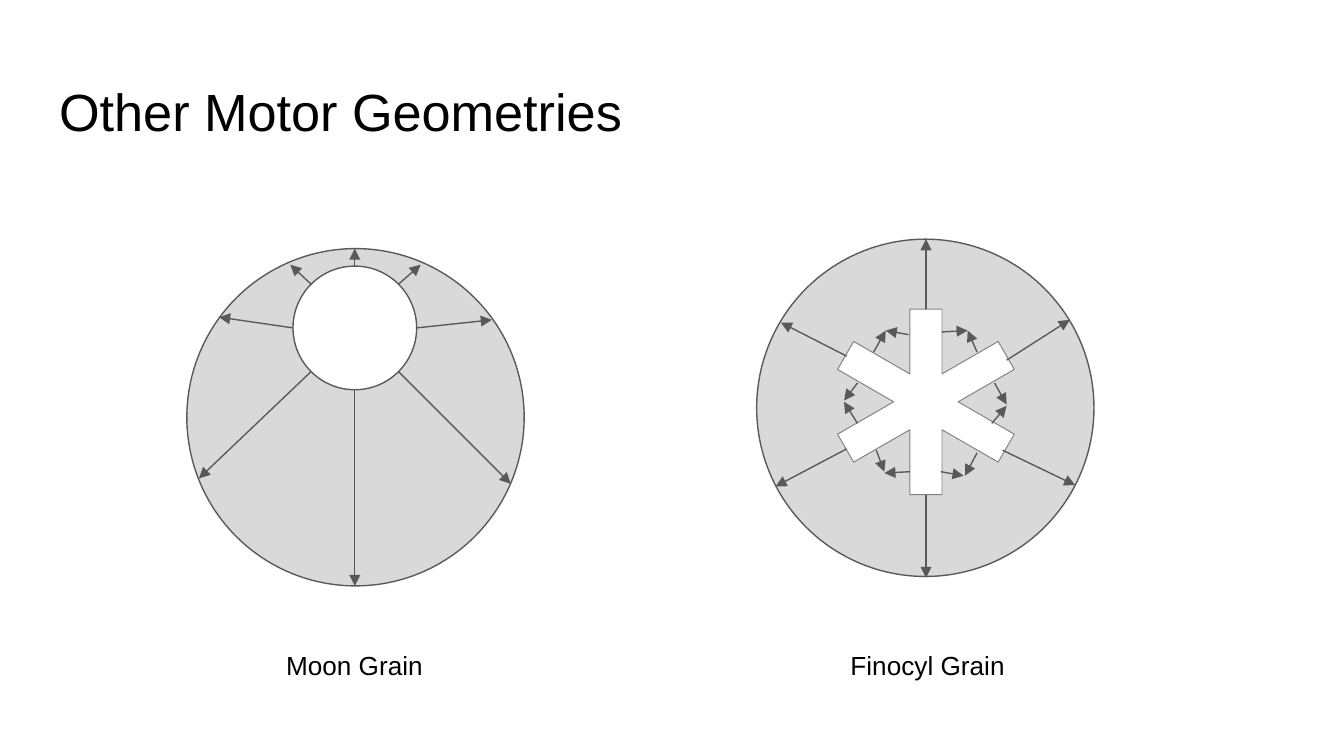
from math import cos, pi, sin
from lxml import etree
from pptx import Presentation
from pptx.dml.color import RGBColor
from pptx.enum.shapes import MSO_CONNECTOR, MSO_SHAPE
from pptx.enum.text import MSO_ANCHOR, PP_ALIGN
from pptx.oxml.ns import qn
from pptx.util import Inches, Pt

OVAL = MSO_SHAPE.OVAL
LINE = MSO_CONNECTOR.STRAIGHT
TOP = MSO_ANCHOR.TOP
LEFT = PP_ALIGN.LEFT

FONT = "Arial"
BLACK, WHITE, GRAIN, EDGE, RIM = "000000", "FFFFFF", "D9D9D9", "595959", "808080"

TITLE = "Other Motor Geometries"
LABELS = [("Moon Grain", 2.03, 1.22), ("Finocyl Grain", 6.23, 1.36)]
SIZE = 2.51
MOON, FIN = (1.39, 1.85), (5.63, 1.78)
BORE, BORE_R = (2.64, 2.44), 0.46
STAR, STAR_R, HALF = (6.89, 2.99), 0.69, 0.12

MOON_TIPS = [(2.64, 1.85), (3.13, 1.97), (3.66, 2.38), (3.8, 3.6),
             (2.64, 4.36), (1.48, 3.56), (1.63, 2.36), (2.16, 1.97)]
FIN_RAYS = [
    ((6.89, 2.3), (6.89, 1.78)), ((7.49, 2.68), (7.96, 2.38)),
    ((7.46, 3.35), (8, 3.61)), ((6.89, 3.68), (6.89, 4.3)),
    ((6.3, 3.34), (5.77, 3.62)), ((6.3, 2.65), (5.81, 2.4)),
]
GAP_RAYS = [
    ((6.5, 2.62), (6.59, 2.46)), ((6.76, 2.49), (6.59, 2.46)),
    ((7.01, 2.47), (7.2, 2.46)), ((7.27, 2.62), (7.2, 2.46)),
    ((7.4, 2.85), (7.49, 3.01)), ((7.38, 3.15), (7.49, 3.02)),
    ((7.27, 3.37), (7.18, 3.54)), ((7, 3.51), (7.17, 3.54)),
    ((6.77, 3.51), (6.58, 3.52)), ((6.52, 3.35), (6.58, 3.51)),
    ((6.38, 3.15), (6.28, 2.99)), ((6.38, 2.85), (6.28, 2.98)),
]


def rgb(code):
    """Turn a hex string into a colour."""
    return RGBColor.from_string(code)


def paint(shape, fill, edge, width):
    """Set the fill and outline of a shape."""
    shape.shadow.inherit = False
    shape.fill.solid()
    shape.fill.fore_color.rgb = rgb(fill)
    shape.line.color.rgb = rgb(edge)
    shape.line.width = Pt(width)


def disc(slide, x, y, size, fill):
    """Draw an outlined circle."""
    shape = slide.shapes.add_shape(OVAL, Inches(x), Inches(y), Inches(size), Inches(size))
    paint(shape, fill, EDGE, 0.75)


def arrow(slide, start, end):
    """Draw a line with an arrowhead at its end."""
    ray = slide.shapes.add_connector(LINE, *(Inches(v) for v in start + end))
    ray.line.color.rgb = rgb(EDGE)
    ray.line.width = Pt(0.75)
    etree.SubElement(ray.line._get_or_add_ln(), qn("a:tailEnd"), type="triangle")
    etree.SubElement(ray._element.spPr, qn("a:effectLst"))


def star(slide):
    """Draw the six-finned core."""
    points = []
    notch = HALF / sin(pi / 6)
    for i in range(6):
        turn = i * pi / 3
        for x, y in [(-HALF, -STAR_R), (HALF, -STAR_R), (HALF, -notch * cos(pi / 6))]:
            points.append((Inches(STAR[0] + x * cos(turn) - y * sin(turn)),
                           Inches(STAR[1] + x * sin(turn) + y * cos(turn))))
    pen = slide.shapes.build_freeform(*points[0])
    pen.add_line_segments(points[1:], close=True)
    paint(pen.convert_to_shape(), WHITE, RIM, 0.5)


def write(shape, text, size):
    """Put one run of text in a shape."""
    para = shape.text_frame.paragraphs[0]
    para.alignment = LEFT
    run = para.add_run()
    run.text = text
    run.font.name = FONT
    run.font.size = Pt(size)
    run.font.color.rgb = rgb(BLACK)


def main():
    """Build the slide."""
    deck = Presentation()
    deck.slide_width = Inches(10)
    deck.slide_height = deck.slide_width * 9 // 16
    slide = deck.slides.add_slide(deck.slide_layouts[5])

    title = slide.shapes.title
    title.left, title.top = Inches(0.34), Inches(0.49)
    title.width, title.height = Inches(9.32), Inches(0.63)
    frame = title.text_frame
    frame.vertical_anchor = TOP
    frame.margin_left = frame.margin_right = Inches(0.1)
    frame.margin_top = frame.margin_bottom = Inches(0.1)
    write(title, TITLE, 28)

    disc(slide, *MOON, SIZE, GRAIN)
    disc(slide, BORE[0] - BORE_R, BORE[1] - BORE_R, 2 * BORE_R, WHITE)
    for i, tip in enumerate(MOON_TIPS):
        turn = i * pi / 4
        base = (BORE[0] + BORE_R * sin(turn), BORE[1] - BORE_R * cos(turn))
        arrow(slide, base, tip)

    disc(slide, *FIN, SIZE, GRAIN)
    star(slide)
    for start, end in FIN_RAYS + GAP_RAYS:
        arrow(slide, start, end)

    for text, x, width in LABELS:
        box = slide.shapes.add_textbox(Inches(x), Inches(4.78), Inches(width), Inches(0.34))
        box.text_frame.word_wrap = False
        write(box, text, 14)

    deck.save("out.pptx")


if __name__ == "__main__":
    main()
